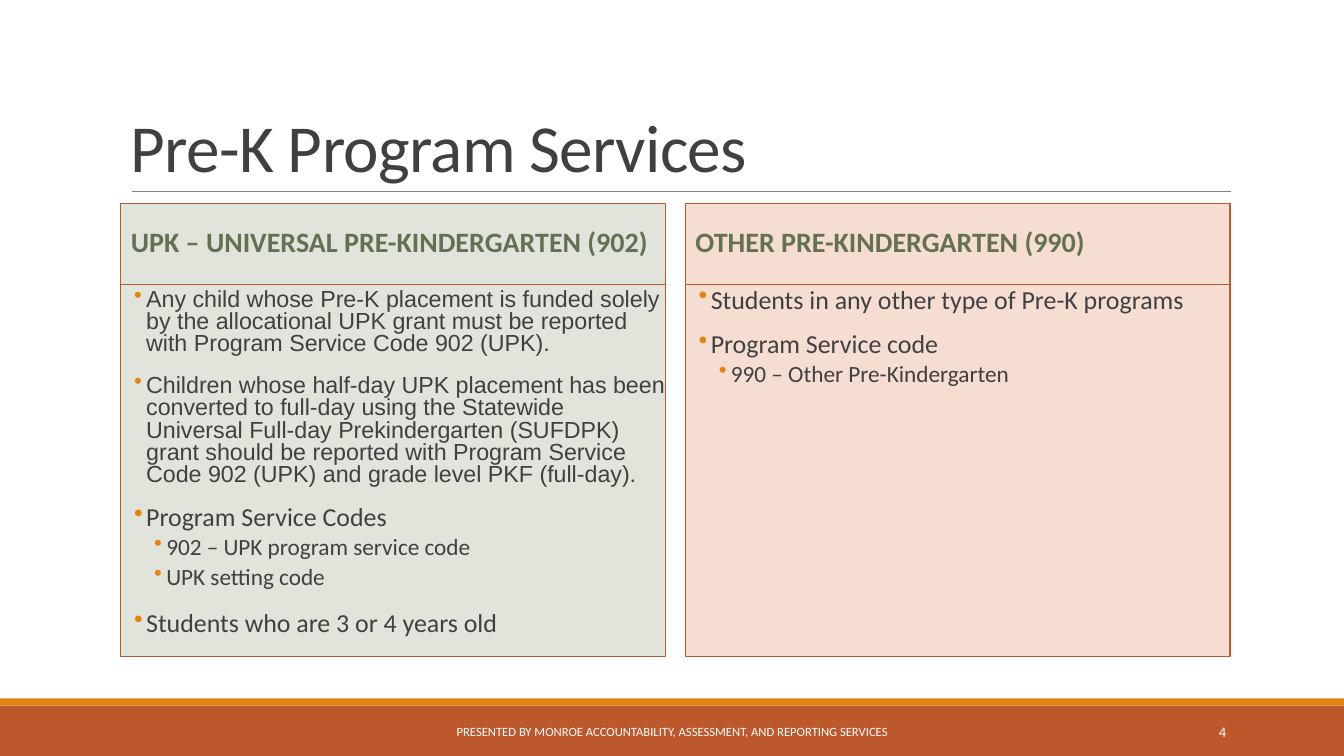
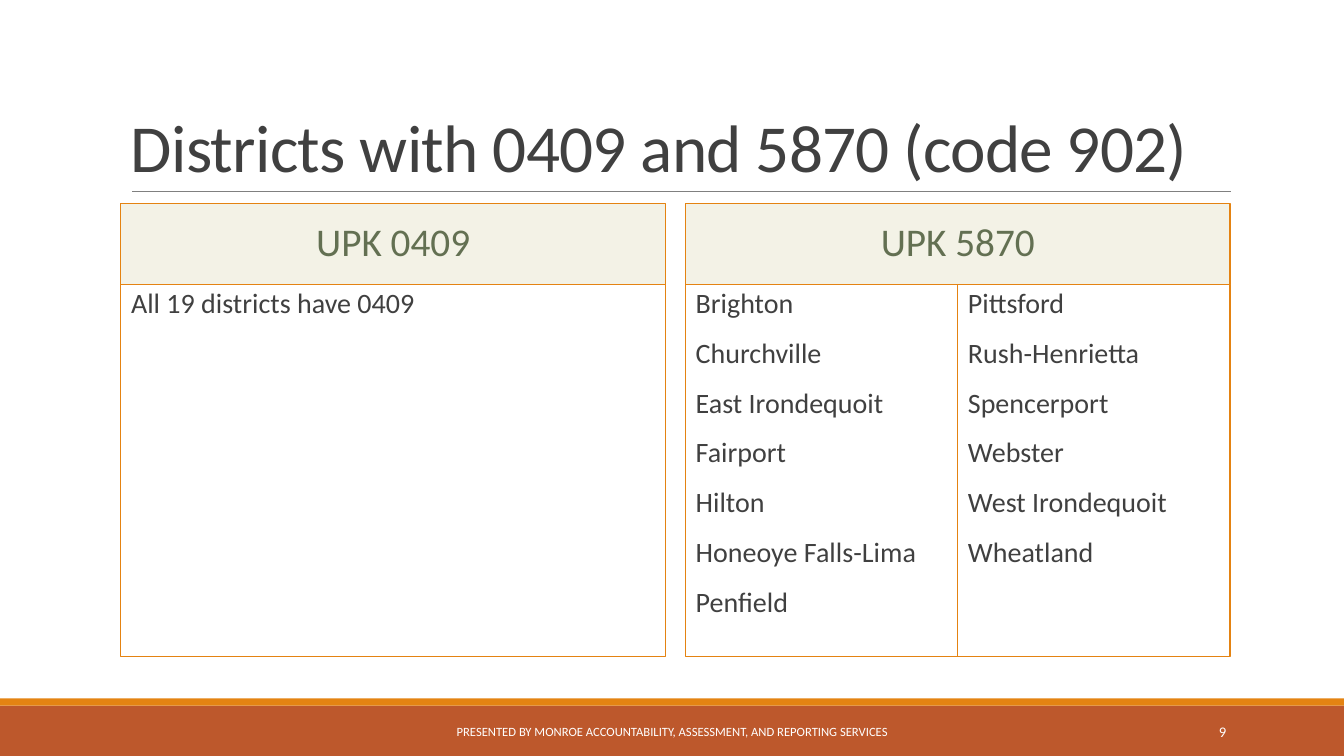
from dataclasses import dataclass

from lxml import etree
from pptx import Presentation
from pptx import util as u
from pptx.dml.color import RGBColor
from pptx.enum import shapes, text
from pptx.oxml.ns import qn

SLIDE_WIDTH, SLIDE_HEIGHT = 13.33, 7.5
RUST, ORANGE, GREY = "BD582C", "E48312", "808080"
INK, OLIVE, WHITE = "404040", "637052", "FFFFFF"
SAGE, PEACH, CREAM = "E0E4DB", "F5DDD2", "F3F2E6"
FOOTER = "PRESENTED BY MONROE ACCOUNTABILITY, ASSESSMENT, AND REPORTING SERVICES"


@dataclass
class Box:
    """A rectangle in inches that can be cut into rows and columns."""
    left: float
    top: float
    width: float
    height: float

    def columns(self, count, gap=0.0):
        """Cut the box into equal columns."""
        width = (self.width - gap * (count - 1)) / count
        return [Box(self.left + i * (width + gap), self.top, width, self.height)
                for i in range(count)]

    def rows(self, first_height):
        """Cut the box into a first row of the given height and the rest."""
        return (Box(self.left, self.top, self.width, first_height),
                Box(self.left, self.top + first_height, self.width,
                    self.height - first_height))

    def lengths(self):
        """Give the place and size as python-pptx lengths."""
        return [u.Inches(v) for v in (self.left, self.top, self.width, self.height)]


@dataclass
class Style:
    """The look of a paragraph."""
    size: float
    color: str = INK
    font: str = "Calibri"
    bold: bool = False
    align: text.PP_ALIGN = text.PP_ALIGN.LEFT
    line: float = 1.0
    before: float = 0
    after: float = 0
    margin: float = 0
    bullet: bool = False
    tracking: float = 0


SLIDE = Box(0, 0, SLIDE_WIDTH, SLIDE_HEIGHT)
TITLE_BOX = Box(1.2, 0.31, 11, 1.59)
BODY = Box(1.2, 2.02, 11, 4.49)
HEADING_HEIGHT, COLUMN_GAP = 0.8, 0.2

TITLE = Style(48, line=0.85, tracking=-0.5)
HEADING = Style(20, OLIVE, bold=True, line=0.9, before=12, after=2)
CODE_HEADING = Style(28, OLIVE, align=text.PP_ALIGN.CENTER, line=0.9, before=12, after=2)
POINT = Style(18.5, line=0.8, before=12, after=2, margin=0.25, bullet=True)
RULE = Style(16.6, font="Arial", line=0.8, before=12, after=2, margin=0.25, bullet=True)
SUBPOINT = Style(16.6, line=0.8, before=2, after=4, margin=0.45, bullet=True)
DISTRICT = Style(20, line=0.9, before=12, after=2, margin=0.1)
FOOTER_STYLE = Style(9, WHITE, align=text.PP_ALIGN.CENTER)
NUMBER_STYLE = Style(10.5, WHITE, align=text.PP_ALIGN.RIGHT)


def rgb(color):
    """Turn a hex string into a colour."""
    return RGBColor.from_string(color)


def add_bullet(properties):
    """Give paragraph properties an orange hanging bullet."""
    properties.set("indent", str(u.Inches(-0.12)))
    color = etree.SubElement(properties, qn("a:buClr"))
    etree.SubElement(color, qn("a:srgbClr"), val=ORANGE)
    etree.SubElement(properties, qn("a:buChar"), char="•")


def write(shape, items, anchor=text.MSO_ANCHOR.TOP, side_inset=0.1):
    """Fill a shape with pairs of wording and style."""
    frame = shape.text_frame
    frame.word_wrap = True
    frame.vertical_anchor = anchor
    frame.margin_left = frame.margin_right = u.Inches(side_inset)
    for i, (wording, style) in enumerate(items):
        paragraph = frame.add_paragraph() if i else frame.paragraphs[0]
        paragraph.text = wording
        paragraph.alignment = style.align
        paragraph.line_spacing = style.line
        paragraph.space_before = u.Pt(style.before)
        paragraph.space_after = u.Pt(style.after)
        properties = paragraph._p.get_or_add_pPr()
        properties.set("marL", str(u.Inches(style.margin)))
        if style.bullet:
            add_bullet(properties)
        font = paragraph.font
        font.size, font.name, font.bold = u.Pt(style.size), style.font, style.bold
        font.color.rgb = rgb(style.color)
        if style.tracking:
            properties.find(qn("a:defRPr")).set("spc", str(round(style.tracking * 100)))


def add_rectangle(slide, box, fill=None, line=None):
    """Add a rectangle with an optional fill and outline."""
    shape = slide.shapes.add_shape(shapes.MSO_SHAPE.RECTANGLE, *box.lengths())
    shape.shadow.inherit = False
    if fill:
        shape.fill.solid()
        shape.fill.fore_color.rgb = rgb(fill)
    else:
        shape.fill.background()
    if line:
        shape.line.color.rgb = rgb(line)
        shape.line.width = u.Pt(0.75)
    else:
        shape.line.fill.background()
    return shape


def add_text(slide, box, wording, style, anchor=text.MSO_ANCHOR.MIDDLE):
    """Add a text box holding one paragraph."""
    write(slide.shapes.add_textbox(*box.lengths()), [(wording, style)], anchor)


def add_title(slide, box, wording):
    """Add the title with the thin rule below it."""
    add_text(slide, box, wording, TITLE, text.MSO_ANCHOR.BOTTOM)
    left, bottom = u.Inches(box.left + 0.11), u.Inches(box.top + box.height)
    rule = slide.shapes.add_connector(
        shapes.MSO_CONNECTOR.STRAIGHT, left, bottom, left + u.Inches(10.9), bottom)
    rule.line.color.rgb = rgb(GREY)
    rule.line.width = u.Pt(0.5)
    etree.SubElement(rule._element.spPr, qn("a:effectLst"))


def add_footer(slide, box, number):
    """Add the two bands, the footer line and the slide number."""
    stripe, band = box.rows(0.07)
    add_rectangle(slide, band, RUST)
    add_rectangle(slide, stripe, ORANGE)
    text_top = band.top + 0.06
    add_text(slide, Box(box.left + 4.03, text_top, 5.27, 0.4), FOOTER, FOOTER_STYLE)
    add_text(slide, Box(box.left + 10.83, text_top, 1.43, 0.4), str(number), NUMBER_STYLE)


def add_panel(slide, box, heading, lists, heading_style, line, heading_fill, fill=None):
    """Add a heading above one or more equal columns of paragraphs."""
    top, body = box.rows(HEADING_HEIGHT)
    write(add_rectangle(slide, top, heading_fill, line), [(heading, heading_style)],
          text.MSO_ANCHOR.MIDDLE)
    for column, items in zip(body.columns(len(lists)), lists):
        write(add_rectangle(slide, column, fill, line), items, side_inset=0)


def add_slide(presentation, title, number):
    """Add a slide with its title and footer and return it with its panel boxes."""
    slide = presentation.slides.add_slide(presentation.slide_layouts[6])
    add_footer(slide, SLIDE.rows(6.93)[1], number)
    add_title(slide, TITLE_BOX, title)
    return slide, BODY.columns(2, COLUMN_GAP)


def add_services_slide(presentation):
    """Compare the two kinds of program service."""
    slide, boxes = add_slide(presentation, "Pre-K Program Services", 4)
    universal = [
        ("Any child whose Pre-K placement is funded solely by the allocational UPK grant "
         "must be reported with Program Service Code 902 (UPK).", RULE),
        ("Children whose half-day UPK placement has been converted to full-day using the "
         "Statewide Universal Full-day Prekindergarten (SUFDPK) grant should be reported "
         "with Program Service Code 902 (UPK) and grade level PKF (full-day).", RULE),
        ("Program Service Codes", POINT),
        ("902 – UPK program service code", SUBPOINT),
        ("UPK setting code", SUBPOINT),
        ("Students who are 3 or 4 years old", POINT),
    ]
    other = [
        ("Students in any other type of Pre-K programs", POINT),
        ("Program Service code", POINT),
        ("990 – Other Pre-Kindergarten", SUBPOINT),
    ]
    panels = [("UPK – UNIVERSAL PRE-KINDERGARTEN (902)", universal, SAGE),
              ("OTHER PRE-KINDERGARTEN (990)", other, PEACH)]
    for box, (heading, items, fill) in zip(boxes, panels):
        add_panel(slide, box, heading, [items], HEADING, RUST, fill, fill)


def add_districts_slide(presentation):
    """List the districts under each code."""
    slide, boxes = add_slide(presentation, "Districts with 0409 and 5870 (code 902)", 9)
    panels = [
        ("UPK 0409", [["All 19 districts have 0409"]]),
        ("UPK 5870", [
            ["Brighton", "Churchville", "East Irondequoit", "Fairport", "Hilton",
             "Honeoye Falls-Lima", "Penfield"],
            ["Pittsford", "Rush-Henrietta", "Spencerport", "Webster", "West Irondequoit",
             "Wheatland"],
        ]),
    ]
    for box, (heading, columns) in zip(boxes, panels):
        lists = [[(name, DISTRICT) for name in names] for names in columns]
        add_panel(slide, box, heading, lists, CODE_HEADING, ORANGE, CREAM)


def main():
    """Build and save the presentation."""
    presentation = Presentation()
    presentation.slide_width = u.Inches(SLIDE_WIDTH)
    presentation.slide_height = u.Inches(SLIDE_HEIGHT)
    add_services_slide(presentation)
    add_districts_slide(presentation)
    presentation.save("out.pptx")


if __name__ == "__main__":
    main()
